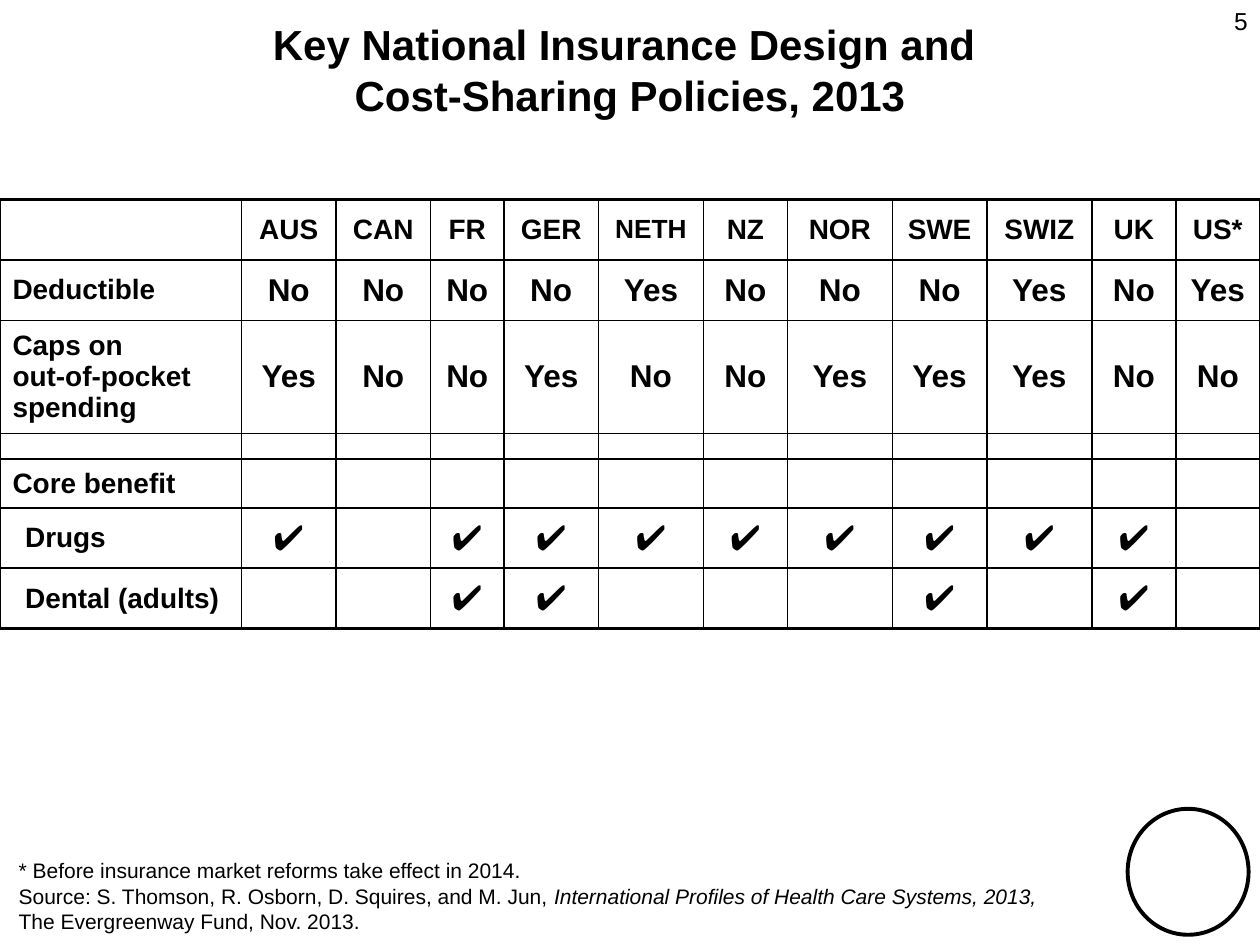
from copy import deepcopy

from lxml import etree
from pptx import Presentation
from pptx.dml.color import RGBColor
from pptx.enum.shapes import MSO_SHAPE
from pptx.enum.text import MSO_ANCHOR, PP_ALIGN
from pptx.oxml.ns import qn
from pptx.util import Pt

LEFT, CENTER, RIGHT = PP_ALIGN.LEFT, PP_ALIGN.CENTER, PP_ALIGN.RIGHT
MIDDLE = MSO_ANCHOR.MIDDLE
OVAL = MSO_SHAPE.OVAL

COLORS = {"ink": "000000"}
FONT = "Arial"

COL_WIDTHS = [138, 54, 54, 42, 54, 60, 48, 60, 54, 60, 48, 48]
ROW_HEIGHTS = [34.5, 34.5, 54, 10, 28, 34.5, 34.5]
COUNTRIES = "AUS CAN FR GER NETH NZ NOR SWE SWIZ UK US*".split()
POLICIES = [
    ["", *COUNTRIES],
    ["Deductible", *"No No No No Yes No No No Yes No Yes".split()],
    ["Caps on \nout-of-pocket spending",
     *"Yes No No Yes No No Yes Yes Yes No No".split()],
    [""] * 12,
    ["Core benefit"] + [""] * 11,
]
BENEFITS = {
    "Drugs": {"AUS", "FR", "GER", "NETH", "NZ", "NOR", "SWE", "SWIZ", "UK"},
    "Dental (adults)": {"FR", "GER", "SWE", "UK"},
}
BENEFIT_ROWS = [[name, *("✔" if c in covered else "" for c in COUNTRIES)]
                for name, covered in BENEFITS.items()]
SIZES = {"NETH": 15, "Yes": 18, "No": 18, "✔": 20}


def add_text(p, text, size, **formats):
    """Add a run for each line of text, with line breaks of the same size."""
    values = {"name": FONT, "size": Pt(size), **formats}
    for i, line in enumerate(text.split("\n")):
        if i:
            p.add_line_break()
            p._p[-1].append(deepcopy(r.font._rPr))
        if line:
            r = p.add_run()
            r.text = line
            for name, value in values.items():
                setattr(r.font, name, value)
            r.font.color.rgb = RGBColor.from_string(COLORS["ink"])


def add_box(slide, box):
    tf = slide.shapes.add_textbox(*map(Pt, box)).text_frame
    tf.word_wrap = True
    return tf.paragraphs[0]


def add_title(slide, box):
    sp = slide.shapes.title
    sp.left, sp.top, sp.width, sp.height = map(Pt, box)
    tf = sp.text_frame
    tf.vertical_anchor = MIDDLE
    p = tf.paragraphs[0]
    p.alignment = CENTER
    add_text(p, "Key National Insurance Design and \nCost-Sharing Policies, 2013",
             24, bold=True)


def add_page_number(slide, box):
    p = add_box(slide, box)
    p.alignment = RIGHT
    add_text(p, "5", 14)


def set_borders(cell, widths):
    """Draw the cell's borders, given in points by side (L, R, T, B)."""
    tc_pr = cell._tc.get_or_add_tcPr()
    for side, width in widths.items():
        ln = etree.SubElement(tc_pr, qn(f"a:ln{side}"), w=str(Pt(width)))
        fill = etree.SubElement(ln, qn("a:solidFill"))
        etree.SubElement(fill, qn("a:srgbClr"), val=COLORS["ink"])


def add_policy_table(slide, box):
    rows = POLICIES + BENEFIT_ROWS
    last = len(rows) - 1
    table = slide.shapes.add_table(len(rows), len(COL_WIDTHS), *map(Pt, box)).table
    table.first_row = table.horz_banding = False
    for col, width in zip(table.columns, COL_WIDTHS):
        col.width = Pt(width)
    for i, (row, height, texts) in enumerate(zip(table.rows, ROW_HEIGHTS, rows)):
        row.height = Pt(height)
        for j, (cell, text) in enumerate(zip(row.cells, texts)):
            set_borders(cell, {"L": 1, "R": 1, "T": 2.25 if i == 0 else 1,
                               "B": 2.25 if i == last else 1})
            cell.fill.background()
            cell.vertical_anchor = MIDDLE
            p = cell.text_frame.paragraphs[0]
            p.alignment = CENTER if j else LEFT
            if text in BENEFITS:
                cell.margin_left = Pt(14.4)
            if text:
                add_text(p, text, SIZES.get(text, 16), bold=True)
            else:
                # Keeps empty cells from stretching the thin spacer row
                etree.SubElement(p._p, qn("a:endParaRPr"), sz="600")


def add_footnote(slide, box):
    p = add_box(slide, box)
    add_text(p, "* Before insurance market reforms take effect in 2014.\n"
                "Source: S. Thomson, R. Osborn, D. Squires, and M. Jun, ", 12)
    add_text(p, "International Profiles of Health Care Systems, 2013, \n", 12, italic=True)
    add_text(p, "The Evergreenway Fund, Nov. 2013.", 12)


def add_badge(slide, box):
    sp = slide.shapes.add_shape(OVAL, *map(Pt, box))
    sp.shadow.inherit = False
    sp.fill.background()
    sp.line.color.rgb = RGBColor.from_string(COLORS["ink"])
    sp.line.width = Pt(2.25)


def main():
    prs = Presentation()
    prs.slide_width, prs.slide_height = Pt(720), Pt(540)
    slide = prs.slides.add_slide(prs.slide_layouts[5])
    add_badge(slide, (644.4, 462.2, 69.1, 72))
    add_page_number(slide, (552, 0, 168, 37.4))
    add_title(slide, (0, 7.2, 720, 64.8))
    add_policy_table(slide, (0, 114, sum(COL_WIDTHS), sum(ROW_HEIGHTS)))
    add_footnote(slide, (3.6, 486.7, 632.9, 51.1))
    prs.save("out.pptx")


if __name__ == "__main__":
    main()
